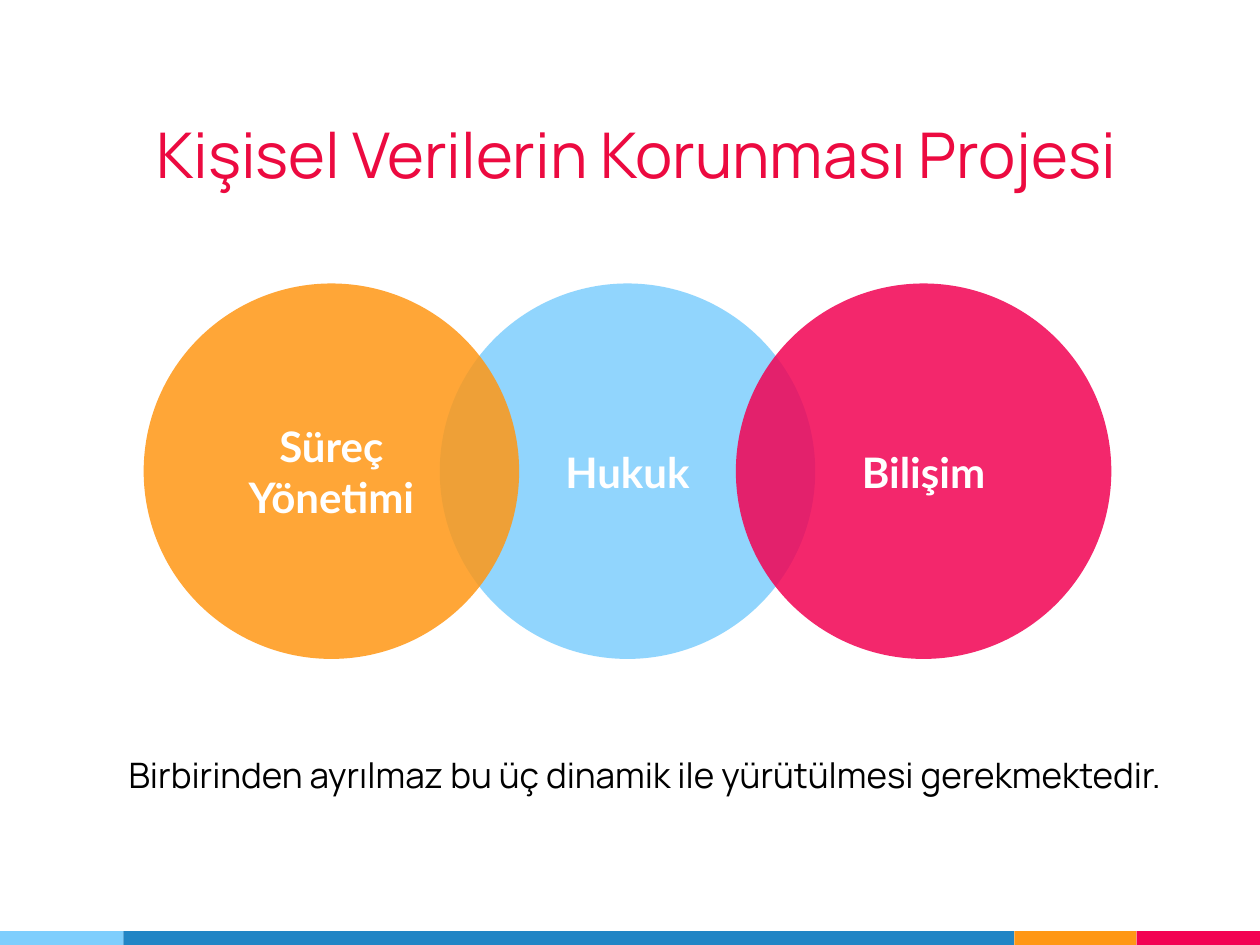
from dataclasses import dataclass

from lxml import etree
from pptx import Presentation
from pptx.dml.color import RGBColor
from pptx.enum import shapes, text
from pptx.oxml import ns
from pptx.util import Inches, Pt


@dataclass(frozen=True)
class Theme:
    sky: str = "7ECEFD"
    blue: str = "2185C5"
    orange: str = "FF9715"
    pink: str = "F20253"
    title: str = "EC0A40"
    white: str = "FFFFFF"
    black: str = "000000"
    title_size: int = 36
    label_size: int = 24
    body_size: int = 20
    label_font: str = "Lato"
    text_font: str = "Manrope"


theme = Theme()


def write(box, wording, *, font, size, color, bold=False, left_inset=0.1,
          align=text.PP_ALIGN.LEFT, anchor=text.MSO_ANCHOR.TOP):
    frame = box.text_frame
    frame.word_wrap = True
    frame.vertical_anchor = anchor
    frame.margin_left = Inches(left_inset)
    frame.margin_top = frame.margin_right = frame.margin_bottom = Inches(0.1)
    para = frame.paragraphs[0]
    para.alignment = align
    span = para.add_run()
    span.text = wording
    span.font.name = font
    span.font.size = Pt(size)
    span.font.bold = bold
    span.font.color.rgb = RGBColor.from_string(color)


def add_filled(page, kind, left, top, width, height, color, opacity=100):
    shape = page.shapes.add_shape(
        kind, Inches(left), Inches(top), Inches(width), Inches(height))
    shape.shadow.inherit = False
    shape.line.fill.background()
    shape.fill.solid()
    shape.fill.fore_color.rgb = RGBColor.from_string(color)
    if opacity < 100:
        tint = shape.fill._xPr.find(".//" + ns.qn("a:srgbClr"))
        etree.SubElement(tint, ns.qn("a:alpha"), val=str(opacity * 1000))
    return shape


deck = Presentation()
deck.slide_width, deck.slide_height = Inches(10), Inches(7.5)
page = deck.slides.add_slide(deck.slide_layouts[6])

# Footer stripe, laid end to end
left = 0
for width, color in ((0.98, theme.sky), (7.07, theme.blue),
                     (0.97, theme.orange), (0.98, theme.pink)):
    add_filled(page, shapes.MSO_SHAPE.RECTANGLE, left, 7.39, width, 0.11, color)
    left += width

# Title
title = page.shapes.add_textbox(Inches(1.14), Inches(0.37), Inches(8.22), Inches(1.25))
write(title, "Kişisel Verilerin Korunması Projesi", font=theme.text_font,
      size=theme.title_size, color=theme.title, anchor=text.MSO_ANCHOR.BOTTOM)

# Overlapping circles, the middle one at the back
first_left, step, diameter = 1.14, 2.35, 2.98
for column, label, color in ((1, "Hukuk", theme.sky),
                             (0, "Süreç Yönetimi", theme.orange),
                             (2, "Bilişim", theme.pink)):
    circle = add_filled(page, shapes.MSO_SHAPE.OVAL, first_left + column * step, 2.25,
                        diameter, diameter, color, opacity=85)
    write(circle, label, font=theme.label_font, size=theme.label_size,
          color=theme.white, bold=True, align=text.PP_ALIGN.CENTER,
          anchor=text.MSO_ANCHOR.MIDDLE)

# Closing sentence
closing = page.shapes.add_textbox(Inches(0.67), Inches(5.88), Inches(9.21), Inches(1.25))
write(closing, "Birbirinden ayrılmaz bu üç dinamik ile yürütülmesi gerekmektedir.",
      font=theme.text_font, size=theme.body_size, color=theme.black, left_inset=0.35)

deck.save("out.pptx")
